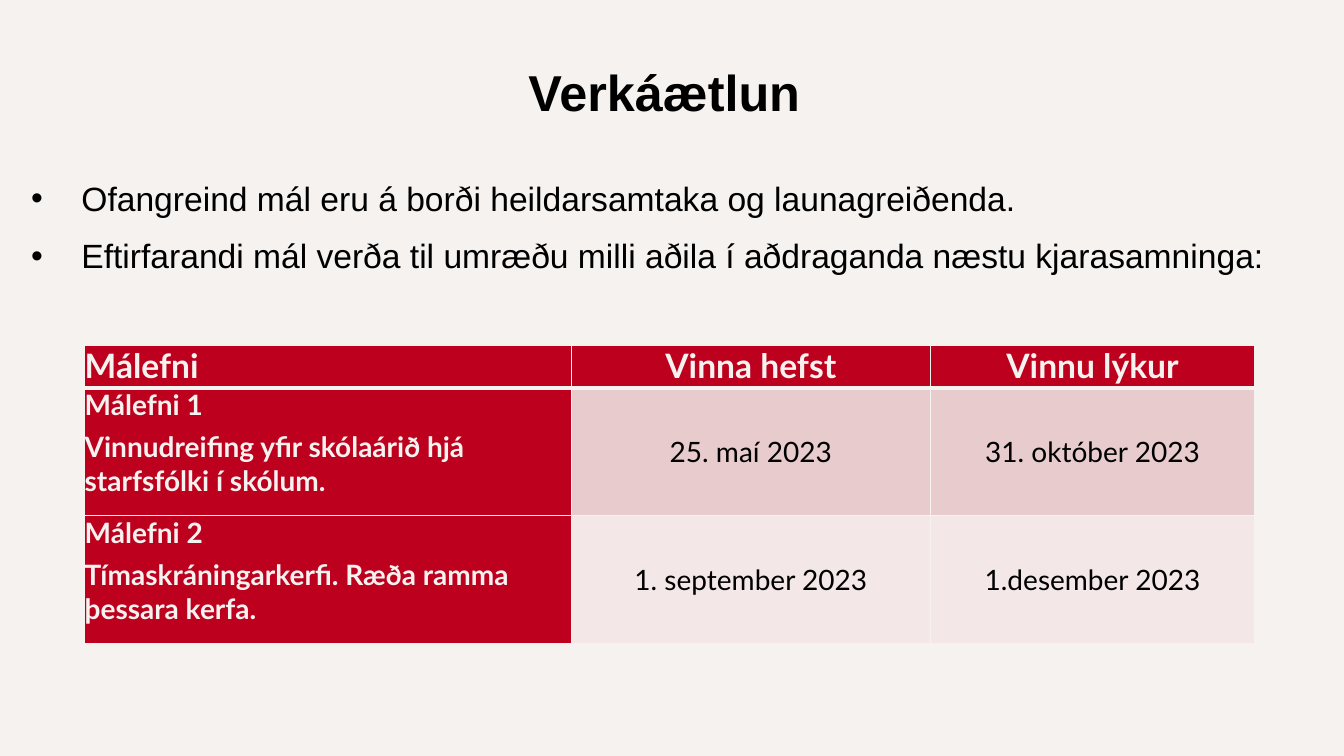
from lxml.etree import SubElement
from pptx import Presentation
from pptx.dml.color import RGBColor
from pptx.enum.text import MSO_ANCHOR as Anchor, MSO_AUTO_SIZE as AutoSize, PP_ALIGN as Align
from pptx.oxml.ns import qn
from pptx.util import Pt

COLORS = {
    "paper": "F5F2F0",
    "ink": "000000",
    "red": "BD001D",
    "rose": "E8CCCD",
    "blush": "F4E7E8",
}

COLUMN_WIDTHS = [347.75, 256.25, 232]
ROW_HEIGHTS = [30, 91.5, 91.5]
HEADERS = ["Málefni", "Vinna hefst", "Vinnu lýkur"]
TOPICS = [
    (["Málefni 1", "Vinnudreifing yfir skólaárið hjá starfsfólki í skólum."],
     "25. maí 2023", "31. október 2023", "rose"),
    (["Málefni 2", "Tímaskráningarkerfi. Ræða ramma þessara kerfa."],
     "1. september 2023", "1.desember 2023", "blush"),
]
POINTS = [
    "Ofangreind mál eru á borði heildarsamtaka og launagreiðenda.",
    "Eftirfarandi mál verða til umræðu milli aðila í aðdraganda næstu kjarasamninga:",
]


def rgb(name):
    return RGBColor.from_string(COLORS[name])


def write(frame, lines, size, font, color, bold=False, align=Align.LEFT, after=0, spacing=1.0):
    frame.text = "\n".join(lines)
    for paragraph in frame.paragraphs:
        paragraph.alignment = align
        paragraph.space_before = Pt(0)
        paragraph.space_after = Pt(after)
        paragraph.line_spacing = spacing
        for run in paragraph.runs:
            run.font.size = Pt(size)
            run.font.name = font
            run.font.bold = bold
            run.font.color.rgb = rgb(color)


def place_title(title, text):
    title.left, title.top, title.width, title.height = Pt(40.3), Pt(52.6), Pt(878.4), Pt(38.2)
    frame = title.text_frame
    frame.auto_size = AutoSize.NONE
    frame.vertical_anchor = Anchor.BOTTOM
    frame.margin_right = Pt(17.2)
    write(frame, [text], 36, "Arial", "ink", bold=True, align=Align.CENTER, spacing=0.9)


def add_bullets(slide, points):
    frame = slide.shapes.add_textbox(Pt(15.1), Pt(121.7), Pt(904.3), Pt(77)).text_frame
    frame.word_wrap = True
    frame.auto_size = AutoSize.SHAPE_TO_FIT_TEXT
    write(frame, points, 24, "Arial", "ink", after=10, spacing=1.07)
    for paragraph in frame.paragraphs:
        properties = paragraph._p.get_or_add_pPr()
        properties.set("marL", str(Pt(36)))
        properties.set("indent", str(Pt(-36)))
        SubElement(properties, qn("a:buFont"), typeface="Arial")
        SubElement(properties, qn("a:buChar"), char="•")


def add_borders(cell, top, bottom):
    properties = cell._tc.get_or_add_tcPr()
    for side, width in (("lnL", 1), ("lnR", 1), ("lnT", top), ("lnB", bottom)):
        line = SubElement(properties, qn(f"a:{side}"), w=str(Pt(width)))
        fill = SubElement(line, qn("a:solidFill"))
        SubElement(fill, qn("a:srgbClr"), val=COLORS["paper"])


def fill_cell(cell, lines, size, fill, color="paper", bold=True, align=Align.LEFT,
              anchor=Anchor.TOP, top=1, bottom=1):
    cell.margin_left = cell.margin_right = cell.margin_top = cell.margin_bottom = 0
    cell.vertical_anchor = anchor
    add_borders(cell, top, bottom)
    cell.fill.solid()
    cell.fill.fore_color.rgb = rgb(fill)
    write(cell.text_frame, lines, size, "Lato", color, bold, align, after=6)


def add_schedule(slide):
    table = slide.shapes.add_table(
        len(ROW_HEIGHTS), len(COLUMN_WIDTHS), Pt(60.5), Pt(247),
        Pt(sum(COLUMN_WIDTHS)), Pt(sum(ROW_HEIGHTS))).table
    table.first_row = table.horz_banding = False
    for column, width in zip(table.columns, COLUMN_WIDTHS):
        column.width = Pt(width)
    for row, height in zip(table.rows, ROW_HEIGHTS):
        row.height = Pt(height)

    for index, header in enumerate(HEADERS):
        fill_cell(table.cell(0, index), [header], 24, "red",
                  align=Align.CENTER if index else Align.LEFT, bottom=3)
    for index, (topic, start, end, tint) in enumerate(TOPICS, 1):
        top = 3 if index == 1 else 1
        fill_cell(table.cell(index, 0), topic, 20, "red", top=top)
        for column, date in enumerate((start, end), 1):
            fill_cell(table.cell(index, column), [date], 20, tint, "ink", False,
                      Align.CENTER, Anchor.MIDDLE, top=top)


def main():
    deck = Presentation()
    deck.slide_width, deck.slide_height = Pt(960), Pt(540)
    slide = deck.slides.add_slide(deck.slide_layouts[5])
    slide.background.fill.solid()
    slide.background.fill.fore_color.rgb = rgb("paper")
    place_title(slide.shapes.title, "Verkáætlun")
    add_schedule(slide)
    add_bullets(slide, POINTS)
    deck.save("out.pptx")


if __name__ == "__main__":
    main()
